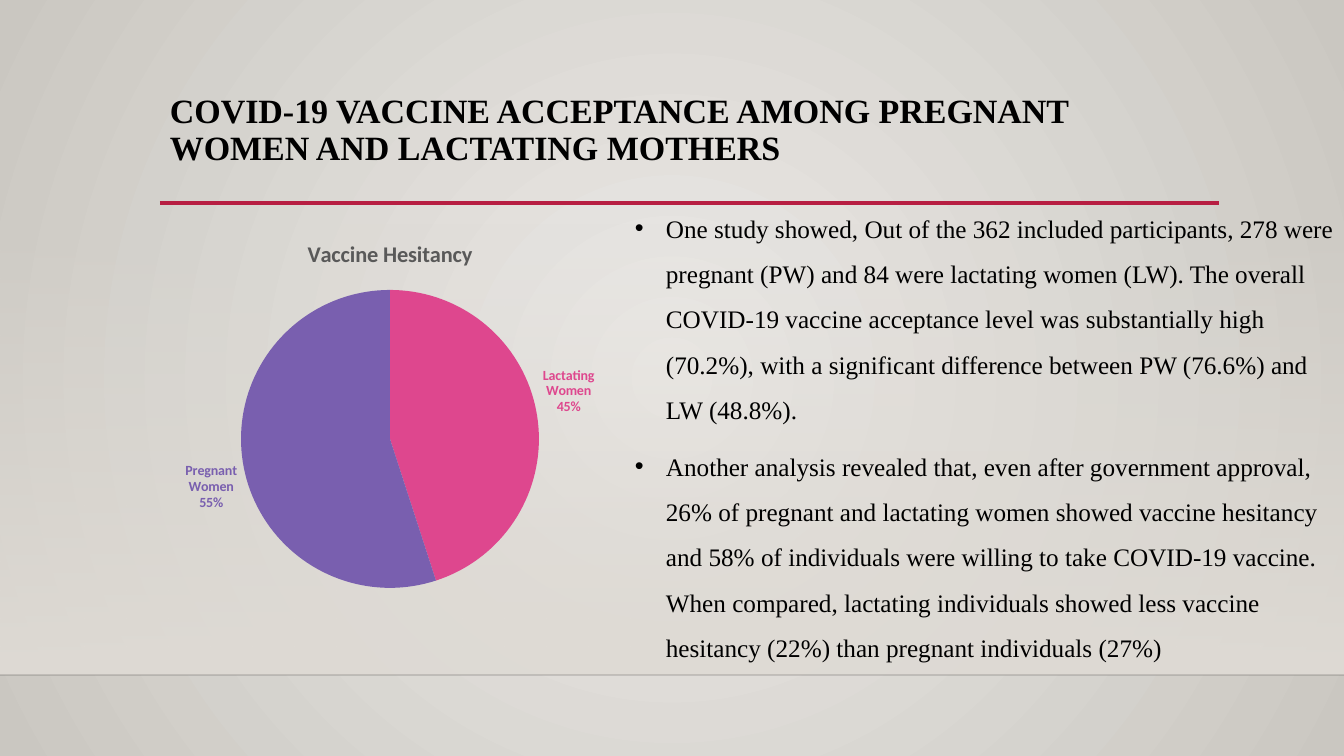
from lxml.etree import SubElement
from pptx import Presentation
from pptx.chart.data import CategoryChartData
from pptx.dml.color import RGBColor
from pptx.enum.chart import XL_CHART_TYPE, XL_LABEL_POSITION
from pptx.enum.shapes import MSO_CONNECTOR, MSO_SHAPE
from pptx.enum.text import MSO_ANCHOR
from pptx.oxml.ns import qn
from pptx.util import Pt

SCALE = 914400 / 100.8
WIDTH, HEIGHT = 1344, 756
FLOOR = 675
SERIF, SANS = "Times New Roman", "Calibri"

TITLE = "COVID-19 VACCINE ACCEPTANCE AMONG PREGNANT WOMEN AND LACTATING MOTHERS"
FINDINGS = [
    "One study showed, Out of the 362 included participants, 278 were pregnant (PW) and 84 were "
    "lactating women (LW). The overall COVID-19 vaccine acceptance level was substantially high "
    "(70.2%), with a significant difference between PW (76.6%) and LW (48.8%).",
    "Another analysis revealed that, even after government approval, 26% of pregnant and lactating "
    "women showed vaccine hesitancy and 58% of individuals were willing to take COVID‑19 vaccine. "
    "When compared, lactating individuals showed less vaccine hesitancy (22%) than pregnant "
    "individuals (27%)",
]
CHART_TITLE = "Vaccine Hesitancy"
SLICES = [("Lactating Women", 45, "DE478E"), ("Pregnant Women", 55, "795FAF")]
CHART_BOX = (139, 222, 502, 380)
PIE_BOX = (241, 290, 298, 298)


def px(*lengths):
    return [round(length * SCALE) for length in lengths]


def color(value):
    return RGBColor.from_string(value)


def set_font(font, name, size, value, bold=False):
    font.name, font.size, font.bold = name, Pt(size), bold
    font.color.rgb = color(value)


def set_gradient(fill, *values):
    fill.gradient()
    for stop, value in zip(fill.gradient_stops, values):
        stop.color.rgb = color(value)


def set_alpha(color_element, percent):
    SubElement(color_element, qn("a:alpha"), val=str(percent * 1000))


def add_rule(page, left, right, top, value, weight):
    rule = page.shapes.add_connector(MSO_CONNECTOR.STRAIGHT, *px(left, top, right, top))
    rule.line.color.rgb = color(value)
    rule.line.width = Pt(weight)
    SubElement(rule._element.spPr, qn("a:effectLst"))
    return rule


def add_text(page, place, paragraphs, size, bold, spacing):
    box = page.shapes.add_textbox(*px(*place))
    frame = box.text_frame
    frame.word_wrap = True
    frame.vertical_anchor = MSO_ANCHOR.TOP
    frame.text = "\n".join(paragraphs)
    for para in frame.paragraphs:
        para.line_spacing = spacing
        for span in para.runs:
            set_font(span.font, SERIF, size, "000000", bold)
    return frame


def add_backdrop(page):
    set_gradient(page.background.fill, "ECEAE7", "CAC7C1")
    gradient = page._element.find(".//" + qn("a:gradFill"))
    gradient.remove(gradient.find(qn("a:lin")))
    circle = SubElement(gradient, qn("a:path"), path="circle")
    SubElement(circle, qn("a:fillToRect"), dict.fromkeys("ltrb", "50000"))

    wall = page.shapes.add_shape(MSO_SHAPE.RECTANGLE, *px(0, 223, WIDTH, FLOOR - 223))
    wall.shadow.inherit = False
    wall.line.fill.background()
    set_gradient(wall.fill, "DFDBD5", "DFDBD5")
    wall.fill.gradient_angle = 270
    set_alpha(wall._element.spPr.find(".//" + qn("a:srgbClr")), 0)

    floor = add_rule(page, 0, WIDTH, FLOOR, "000001", 1)
    set_alpha(floor._element.spPr.find(".//" + qn("a:srgbClr")), 20)
    add_rule(page, 160, 1219, 203, "B71E42", 2.5)


def add_pie(page):
    data = CategoryChartData()
    data.categories = [name for name, share, value in SLICES]
    data.add_series(CHART_TITLE, [share for name, share, value in SLICES])
    chart = page.shapes.add_chart(XL_CHART_TYPE.PIE, *px(*CHART_BOX), data).chart
    set_font(chart.font, SANS, 10, "000000")
    chart.has_legend = False
    chart.has_title = True
    heading = chart.chart_title.text_frame
    heading.text = CHART_TITLE
    set_font(heading.paragraphs[0].runs[0].font, SANS, 16, "595959", True)

    plot = chart.plots[0]
    plot.vary_by_categories = True
    for index, (name, share, value) in enumerate(SLICES):
        point = plot.series[0].points[index]
        point.format.fill.solid()
        point.format.fill.fore_color.rgb = color(value)
        label = point.data_label
        set_font(label.font, SANS, 10, value, True)
        label.position = XL_LABEL_POSITION.OUTSIDE_END
        element = label._get_or_add_dLbl()
        for tag, shown in (("showVal", "0"), ("showCatName", "1"), ("showPercent", "1")):
            element.find(qn("c:" + tag)).set("val", shown)
        SubElement(element, qn("c:separator")).text = "\n"

    area = chart._chartSpace.find(".//" + qn("c:plotArea"))
    layout = area.find(qn("c:layout"))
    if layout is None:
        layout = SubElement(area, qn("c:layout"))
        area.insert(0, layout)
    manual = SubElement(layout, qn("c:manualLayout"))
    left, top, width, height = CHART_BOX
    pie_left, pie_top, pie_width, pie_height = PIE_BOX
    settings = [
        ("layoutTarget", "inner"), ("xMode", "edge"), ("yMode", "edge"),
        ("x", (pie_left - left) / width), ("y", (pie_top - top) / height),
        ("w", pie_width / width), ("h", pie_height / height),
    ]
    for tag, setting in settings:
        SubElement(manual, qn("c:" + tag), val=str(setting))


def add_findings(page):
    frame = add_text(page, (625, 193, 720, 475), FINDINGS, 18, False, 1.5)
    indent = px(31)[0]
    for para in frame.paragraphs:
        para.space_after = Pt(8)
        properties = para._p.get_or_add_pPr()
        properties.set("marL", str(indent))
        properties.set("indent", str(-indent))
        SubElement(properties, qn("a:buFont"), typeface="Arial")
        SubElement(properties, qn("a:buChar"), char="•")


def main():
    deck = Presentation()
    deck.slide_width, deck.slide_height = px(WIDTH, HEIGHT)
    page = deck.slides.add_slide(deck.slide_layouts[6])
    add_backdrop(page)
    add_text(page, (160, 89, 1058, 116), [TITLE], 24.3, True, 0.9)
    add_pie(page)
    add_findings(page)
    deck.save("out.pptx")


if __name__ == "__main__":
    main()
